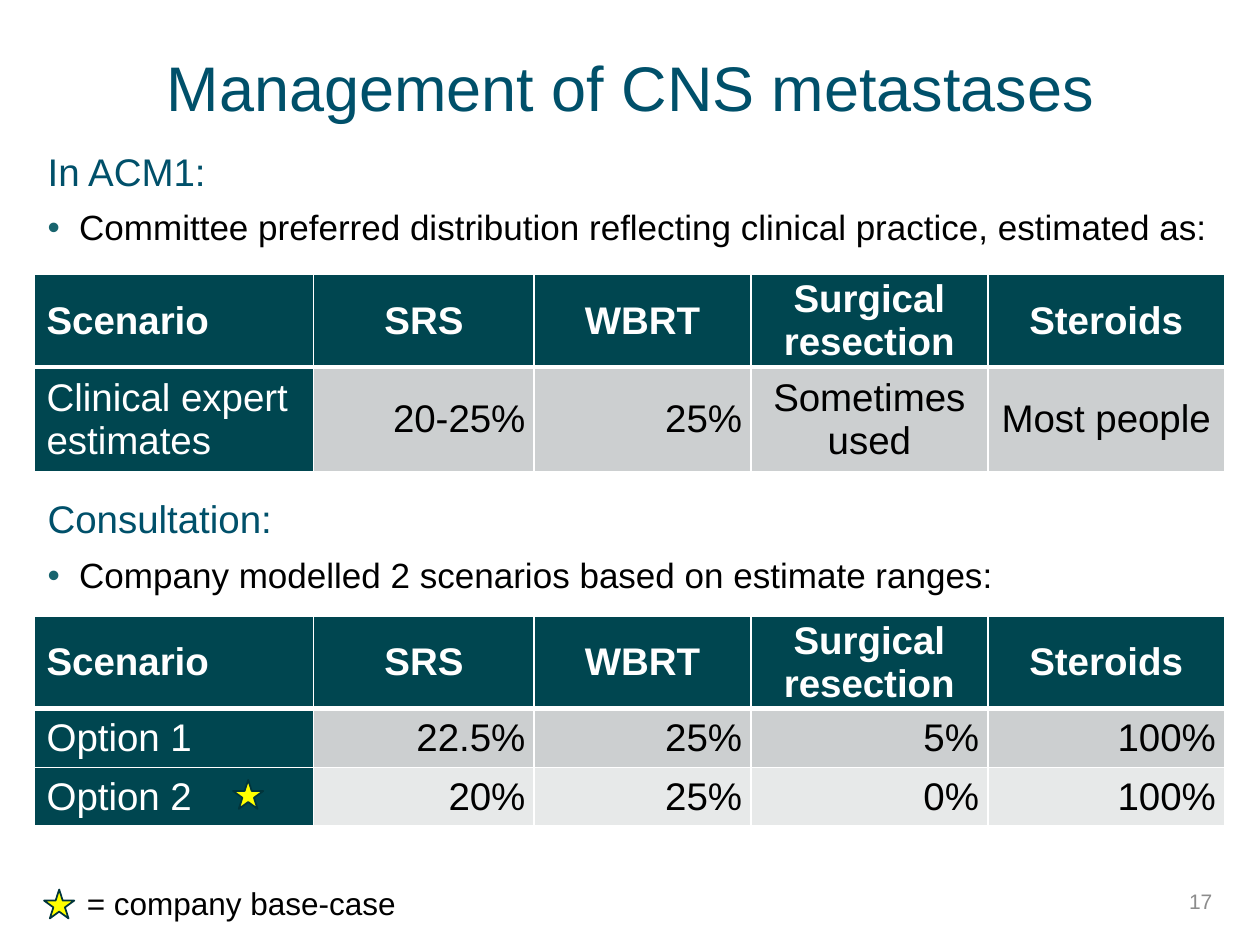
"""Build the slide on management of CNS metastases."""
import pptx
import pptx.chart.data
import pptx.dml.color
import pptx.enum.shapes
import pptx.enum.text
import pptx.oxml
import pptx.oxml.ns
import pptx.util
from pptx.util import Inches

COLORS = {
    "heading": "00506A", "bullet": "18646E", "header": "004650", "odd": "CCCFD0",
    "even": "E7E9E9", "white": "FFFFFF", "black": "000000", "number": "8C8C8C",
    "star": "FFFF00", "outline": "00343B",
}
HEADER = ["Scenario", "SRS", "WBRT", "Surgical resection", "Steroids"]
COLUMN_WIDTHS = [2.22, 1.75, 1.72, 1.88, 1.88]
SECTIONS = [
    {"heading": "In ACM1:", "top": 1.15, "table_top": 2.18, "row_height": 0.78,
     "point": "Committee preferred distribution reflecting clinical practice, estimated as:",
     "rows": [["Clinical expert estimates", "20-25%", "25%", "Sometimes used", "Most people"]]},
    {"heading": "Consultation:", "top": 3.91, "table_top": 4.89, "row_height": 0.44,
     "point": "Company modelled 2 scenarios based on estimate ranges:",
     "rows": [["Option 1", "22.5%", "25%", "5%", "100%"],
              ["Option 2", "20%", "25%", "0%", "100%"]]},
]
STARS = [(1.85, 6.19), (0.35, 7.06)]
ALIGN = pptx.enum.text.PP_ALIGN
MIDDLE = pptx.enum.text.MSO_ANCHOR.MIDDLE


def rgb(name):
    return pptx.dml.color.RGBColor.from_string(COLORS[name])


def write_text(paragraph, text, size=22, color="black", bold=False, align=ALIGN.LEFT,
               spacing=1.0, after=0, bullet=False):
    run = paragraph.add_run()
    run.text = text
    run.font.name = "Arial"
    run.font.size = pptx.util.Pt(size)
    run.font.bold = bold
    run.font.color.rgb = rgb(color)
    paragraph.alignment = align
    paragraph.line_spacing = spacing
    paragraph.space_after = pptx.util.Pt(after)
    if bullet:
        properties = paragraph._p.get_or_add_pPr()
        properties.set("marL", str(Inches(0.25)))
        properties.set("indent", str(-Inches(0.25)))
        namespace = pptx.oxml.ns.nsdecls("a")
        for xml in (f'<a:buClr {namespace}><a:srgbClr val="{COLORS["bullet"]}"/></a:buClr>',
                    f'<a:buFont {namespace} typeface="Arial"/>',
                    f'<a:buChar {namespace} char="•"/>'):
            properties.append(pptx.oxml.parse_xml(xml))


def add_text_frame(slide, left, top, width, height, anchor=pptx.enum.text.MSO_ANCHOR.TOP):
    box = slide.shapes.add_textbox(Inches(left), Inches(top), Inches(width), Inches(height))
    box.text_frame.word_wrap = True
    box.text_frame.vertical_anchor = anchor
    return box.text_frame


def set_borders(cell, row_index):
    widths = {"L": 1, "R": 1, "T": 3 if row_index == 1 else 1, "B": 3 if row_index == 0 else 1}
    properties = cell._tc.get_or_add_tcPr()
    for position, (side, width) in enumerate(widths.items()):
        properties.insert(position, pptx.oxml.parse_xml(
            f'<a:ln{side} {pptx.oxml.ns.nsdecls("a")} w="{pptx.util.Pt(width)}"><a:solidFill>'
            f'<a:srgbClr val="{COLORS["white"]}"/></a:solidFill></a:ln{side}>'))


def format_cell(cell, text, row_index, column_index):
    is_header, is_label = row_index == 0, column_index == 0
    cell.vertical_anchor = MIDDLE
    if not is_label:
        cell.margin_left = cell.margin_right = Inches(0.07)
        cell.margin_top = cell.margin_bottom = 0
    dark = is_header or is_label
    cell.fill.solid()
    cell.fill.fore_color.rgb = rgb("header" if dark else "odd" if row_index % 2 else "even")
    set_borders(cell, row_index)
    if is_label:
        align = ALIGN.LEFT
    else:
        align = ALIGN.RIGHT if text.endswith("%") else ALIGN.CENTER
    write_text(cell.text_frame.paragraphs[0], text, color="white" if dark else "black",
               bold=is_header, align=align)


def add_section(slide, section):
    frame = add_text_frame(slide, 0.28, section["top"], 9.44, 0.94)
    write_text(frame.paragraphs[0], section["heading"], color="heading", spacing=0.95, after=8)
    write_text(frame.add_paragraph(), section["point"], size=20, spacing=0.95, after=8, bullet=True)
    rows = [HEADER] + section["rows"]
    heights = [0.68] + [section["row_height"]] * len(section["rows"])
    table = slide.shapes.add_table(
        len(rows), len(HEADER), Inches(0.27), Inches(section["table_top"]),
        Inches(sum(COLUMN_WIDTHS)), Inches(sum(heights))).table
    for column, width in zip(table.columns, COLUMN_WIDTHS):
        column.width = Inches(width)
    for row_index, (values, height) in enumerate(zip(rows, heights)):
        table.rows[row_index].height = Inches(height)
        for column_index, text in enumerate(values):
            format_cell(table.cell(row_index, column_index), text, row_index, column_index)


def add_star(slide, left, top):
    star = slide.shapes.add_shape(pptx.enum.shapes.MSO_SHAPE.STAR_5_POINT, Inches(left),
                                  Inches(top), Inches(0.24), Inches(0.23))
    star.shadow.inherit = False
    star.fill.solid()
    star.fill.fore_color.rgb = rgb("star")
    star.line.color.rgb = rgb("outline")
    star.line.width = pptx.util.Pt(1)


def main():
    presentation = pptx.Presentation()
    presentation.slide_width, presentation.slide_height = Inches(10), Inches(7.5)
    slide = presentation.slides.add_slide(presentation.slide_layouts[6])
    title = add_text_frame(slide, 0.28, 0.21, 9.45, 1.03, MIDDLE)
    write_text(title.paragraphs[0], "Management of CNS metastases", size=36, color="heading",
               align=ALIGN.CENTER, spacing=0.9)
    for section in SECTIONS:
        add_section(slide, section)
    for left, top in STARS:
        add_star(slide, left, top)
    legend = add_text_frame(slide, 0.59, 6.97, 8.82, 0.4)
    write_text(legend.paragraphs[0], "= company base-case", size=18)
    number = add_text_frame(slide, 7.47, 6.95, 2.25, 0.4, MIDDLE)
    write_text(number.paragraphs[0], "17", size=12, color="number", align=ALIGN.RIGHT)
    presentation.save("out.pptx")


if __name__ == "__main__":
    main()
